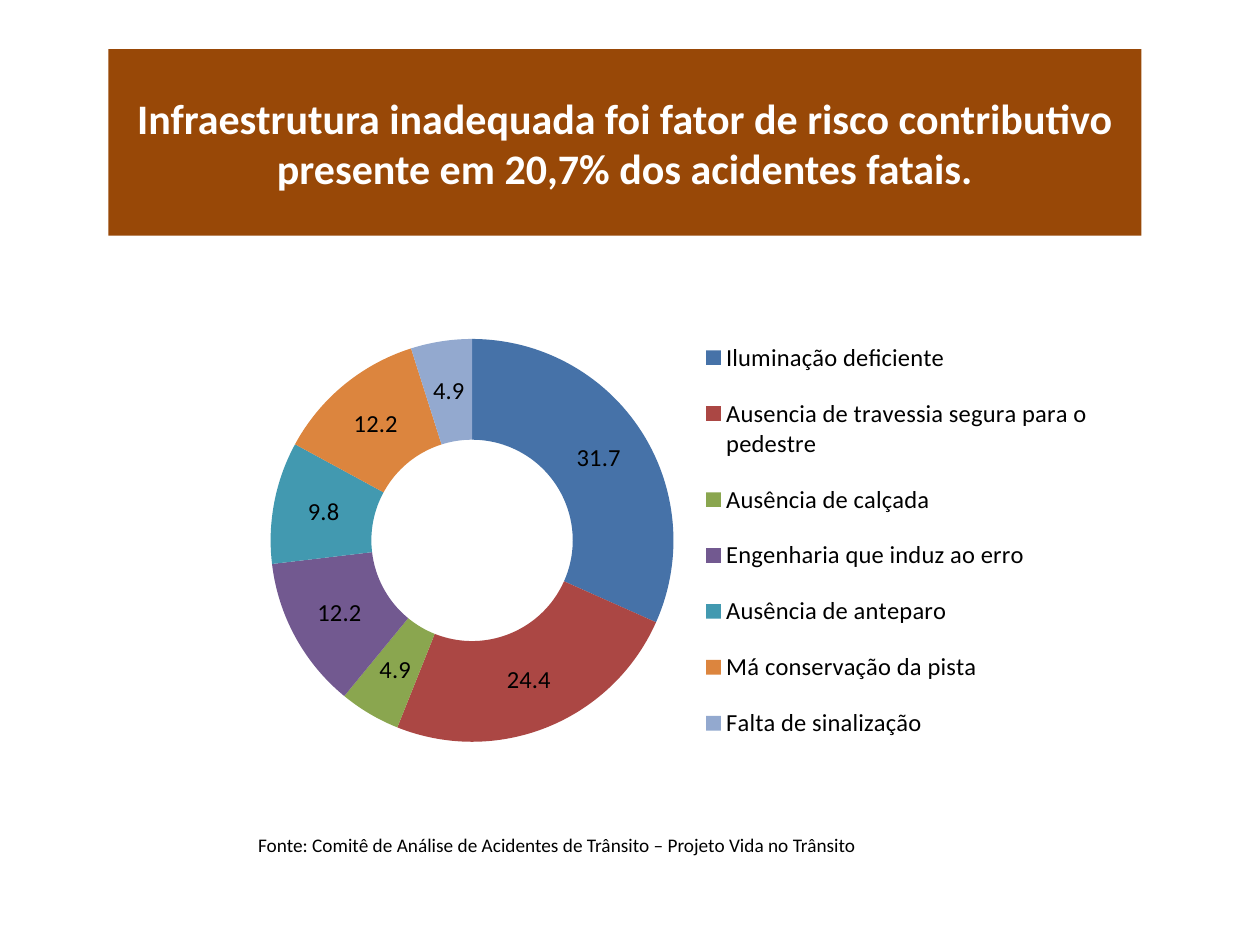
from dataclasses import dataclass

from pptx import Presentation
from pptx.chart.data import CategoryChartData
from pptx.dml.color import RGBColor
from pptx.enum.chart import XL_CHART_TYPE, XL_LEGEND_POSITION
from pptx.enum.shapes import MSO_SHAPE
from pptx.enum.text import MSO_ANCHOR, PP_ALIGN
from pptx.oxml import parse_xml
from pptx.oxml.ns import nsdecls, qn
from pptx.util import Inches, Pt


@dataclass(frozen=True)
class Theme:
    font: str = "Calibri"
    band: str = "984807"
    light: str = "FFFFFF"
    dark: str = "000000"
    title: int = 24
    label: int = 14
    note: int = 11
    slices: tuple = ("4672A8", "AB4744", "8AA64F", "725990",
                     "4299B0", "DC853E", "93A9CF")


class Deck:
    def __init__(self, theme, wide=10, high=7.5):
        self.theme = theme
        self.prs = Presentation()
        self.prs.slide_width = Inches(wide)
        self.prs.slide_height = Inches(high)
        self.slide = self.prs.slides.add_slide(self.prs.slide_layouts[6])

    def area(self, left, top, width, height):
        """Turn percentages of the slide into lengths."""
        wide, high = self.prs.slide_width, self.prs.slide_height
        return [int(part * side / 100) for part, side in
                zip((left, top, width, height), (wide, high, wide, high))]

    def style(self, font, size, color, bold=False):
        font.name, font.size, font.bold = self.theme.font, Pt(size), bold
        font.color.rgb = RGBColor.from_string(color)

    def text(self, frame, words, size, color, bold=False, align=PP_ALIGN.LEFT):
        frame.word_wrap = True
        line = frame.paragraphs[0]
        line.alignment = align
        run = line.add_run()
        run.text = words
        self.style(run.font, size, color, bold)

    def band(self, area, words):
        box = self.slide.shapes.add_shape(MSO_SHAPE.RECTANGLE, *self.area(*area))
        box.shadow.inherit = False
        box.fill.solid()
        box.fill.fore_color.rgb = RGBColor.from_string(self.theme.band)
        box.line.fill.background()
        box.text_frame.vertical_anchor = MSO_ANCHOR.MIDDLE
        self.text(box.text_frame, words, self.theme.title, self.theme.light,
                  True, PP_ALIGN.CENTER)

    def note(self, area, words):
        box = self.slide.shapes.add_textbox(*self.area(*area))
        self.text(box.text_frame, words, self.theme.note, self.theme.dark)

    def place(self, part, spot, index, inner=False):
        """Fix a chart part at shares of the chart's own area."""
        for old in part.findall(qn("c:layout")):
            part.remove(old)
        target = '<c:layoutTarget val="inner"/>' if inner else ""
        modes = "".join(f'<c:{axis}Mode val="edge"/>' for axis in "xy")
        sizes = "".join(f'<c:{key} val="{val}"/>' for key, val in zip("xywh", spot))
        part.insert(index, parse_xml(
            f'<c:layout {nsdecls("c")}><c:manualLayout>{target}{modes}{sizes}'
            "</c:manualLayout></c:layout>"))

    def ring(self, area, name, rows, plot, key):
        theme = self.theme
        data = CategoryChartData(number_format="0.0")
        data.categories = [label for label, _ in rows]
        data.add_series(name, [value for _, value in rows])
        chart = self.slide.shapes.add_chart(
            XL_CHART_TYPE.DOUGHNUT, *self.area(*area), data).chart
        chart.has_title = False
        self.style(chart.font, theme.label, theme.dark)

        # Slices and their values
        ring = chart.plots[0]
        ring.vary_by_categories = True
        for index, color in enumerate(theme.slices):
            fill = ring.series[0].points[index].format.fill
            fill.solid()
            fill.fore_color.rgb = RGBColor.from_string(color)
        ring.has_data_labels = True
        labels = ring.data_labels
        labels.show_value = True
        labels.show_percentage = False
        labels.number_format = "0.0"
        labels.number_format_is_linked = False
        self.style(labels.font, theme.label, theme.dark)

        # Legend
        chart.has_legend = True
        legend = chart.legend
        legend.position = XL_LEGEND_POSITION.RIGHT
        legend.include_in_layout = False
        self.style(legend.font, theme.label, theme.dark)

        root = chart._chartSpace
        self.place(root.find(".//" + qn("c:plotArea")), plot, 0, True)
        self.place(root.find(".//" + qn("c:legend")), key, 1)

    def save(self):
        self.prs.save("out.pptx")


def main():
    deck = Deck(Theme())

    # Headline
    deck.band((8.6, 5.2, 82, 19.73),
              "Infraestrutura inadequada foi fator de risco contributivo "
              "presente em 20,7% dos acidentes fatais.")

    # Risk factors, in percent
    rows = [
        ("Iluminação deficiente", 31.7),
        ("Ausencia de travessia segura para o pedestre", 24.4),
        ("Ausência de calçada", 4.9),
        ("Engenharia que induz ao erro", 12.2),
        ("Ausência de anteparo", 9.8),
        ("Má conservação da pista", 12.2),
        ("Falta de sinalização", 4.9),
    ]
    deck.ring((18.7, 30.27, 69.5, 54.4), "Series 1", rows,
              plot=(0.04, 0.1, 0.46, 0.79), key=(0.52, 0.06, 0.47, 0.87))

    # Source line
    deck.note((19.5, 87.47, 60.2, 3.87),
              "Fonte: Comitê de Análise de Acidentes de Trânsito – "
              "Projeto Vida no Trânsito")
    deck.save()


if __name__ == "__main__":
    main()
